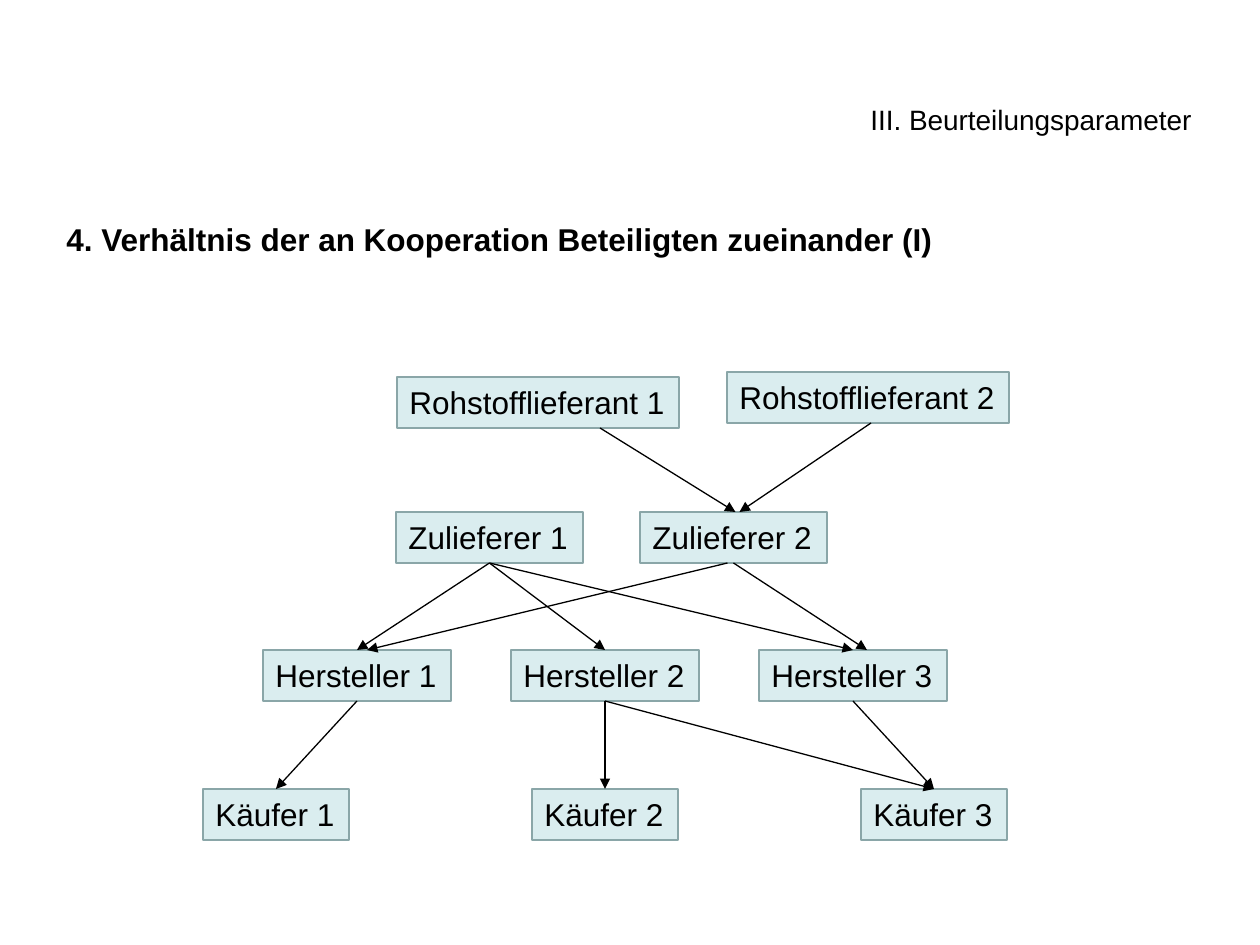
from pptx import Presentation
from pptx.dml.color import RGBColor
from pptx.enum.shapes import MSO_CONNECTOR, MSO_SHAPE
from pptx.enum.text import MSO_ANCHOR, MSO_AUTO_SIZE, PP_ALIGN
from pptx.oxml.ns import qn
from pptx.util import Pt
from lxml import etree

RECT, STRAIGHT = MSO_SHAPE.RECTANGLE, MSO_CONNECTOR.STRAIGHT
TOP, LEFT = MSO_ANCHOR.TOP, PP_ALIGN.LEFT
GROW = MSO_AUTO_SIZE.SHAPE_TO_FIT_TEXT

BLACK = RGBColor(0x00, 0x00, 0x00)
BOX_FILL = RGBColor(0xDA, 0xED, 0xEF)
BOX_LINE = RGBColor(0x8A, 0xA6, 0xA8)
FONT = "Arial"
EMU_PER_PX = 914400 / 126
BOX_HEIGHT = 51

# Headings: text, left, top, width, height, size, bold, space after
HEADINGS = [
    ("4. Verhältnis der an Kooperation Beteiligten zueinander (I)",
     54, 214, 1111, 51, 18, True, 6),
    ("III. Beurteilungsparameter", 858, 96, 367, 47, 16, False, 0),
]

# Supply chain levels: role, first left, step, width, top of each box
LEVELS = [
    ("Rohstofflieferant", 397, 330, 282, [377, 372]),
    ("Zulieferer", 396, 244, 187, [512, 512]),
    ("Hersteller", 263, 248, 188, [650, 650, 650]),
    ("Käufer", 203, 329, 146, [789, 789, 789]),
]

# Deliveries: supplier, customer, start and end shift from the box centres
DELIVERIES = [
    ("Rohstofflieferant 1", "Zulieferer 2", 62, 2),
    ("Rohstofflieferant 2", "Zulieferer 2", 3, 6),
    ("Zulieferer 1", "Hersteller 1", 0, 0),
    ("Zulieferer 1", "Hersteller 2", 0, 0),
    ("Zulieferer 1", "Hersteller 3", 0, 0),
    ("Zulieferer 2", "Hersteller 1", -6, 10),
    ("Zulieferer 2", "Hersteller 3", 0, 14),
    ("Hersteller 1", "Käufer 1", 0, 0),
    ("Hersteller 2", "Käufer 2", 0, 0),
    ("Hersteller 2", "Käufer 3", 0, 0),
    ("Hersteller 3", "Käufer 3", 0, 0),
]


def px(*lengths):
    return [round(length * EMU_PER_PX) for length in lengths]


def write(shape, text, size, bold=False, wrap=True, space_after=0):
    frame = shape.text_frame
    frame.text = text
    frame.word_wrap = wrap
    frame.auto_size = GROW
    frame.vertical_anchor = TOP
    paragraph = frame.paragraphs[0]
    paragraph.alignment = LEFT
    paragraph.space_after = Pt(space_after)
    font = paragraph.runs[0].font
    font.name, font.size, font.bold = FONT, Pt(size), bold
    font.color.rgb = BLACK


def add_company(slide, name, left, top, width):
    company = slide.shapes.add_shape(RECT, *px(left, top, width, BOX_HEIGHT))
    company.shadow.inherit = False
    company.fill.solid()
    company.fill.fore_color.rgb = BOX_FILL
    company.line.color.rgb = BOX_LINE
    company.line.width = Pt(0.75)
    write(company, name, 18, wrap=False)


def add_arrow(slide, start, end):
    arrow = slide.shapes.add_connector(STRAIGHT, *px(*start, *end))
    arrow.line.color.rgb = BLACK
    arrow.line.width = Pt(0.75)
    etree.SubElement(arrow.line._get_or_add_ln(), qn("a:tailEnd"), type="triangle")
    etree.SubElement(arrow._element.spPr, qn("a:effectLst"))


def main():
    presentation = Presentation()
    presentation.slide_width, presentation.slide_height = px(1260, 945)
    slide = presentation.slides.add_slide(presentation.slide_layouts[6])

    # Companies, level by level
    anchors = {}
    for role, first_left, step, width, tops in LEVELS:
        for index, top in enumerate(tops):
            name = f"{role} {index + 1}"
            left = first_left + index * step
            add_company(slide, name, left, top, width)
            anchors[name] = (left + width / 2, top)

    # Delivery arrows, from bottom edge to top edge
    for supplier, customer, start_shift, end_shift in DELIVERIES:
        start_x, start_top = anchors[supplier]
        end_x, end_top = anchors[customer]
        add_arrow(slide, (start_x + start_shift, start_top + BOX_HEIGHT),
                  (end_x + end_shift, end_top))

    # Headings
    for text, left, top, width, height, size, bold, space_after in HEADINGS:
        heading = slide.shapes.add_textbox(*px(left, top, width, height))
        write(heading, text, size, bold, space_after=space_after)

    presentation.save("out.pptx")


if __name__ == "__main__":
    main()
